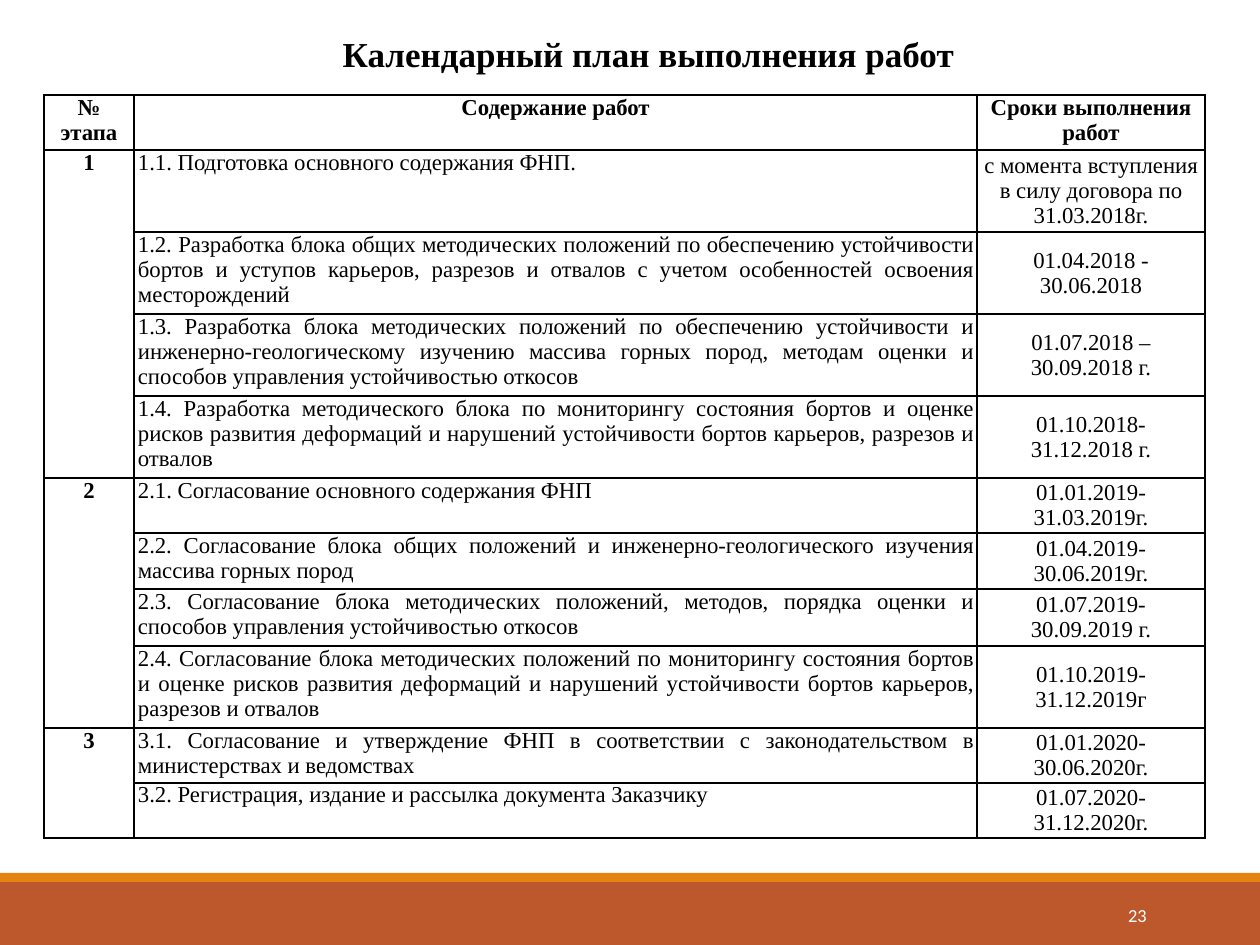
from lxml import etree
from pptx import Presentation, util as u
from pptx.dml.color import RGBColor
from pptx.enum import shapes, text
from pptx.oxml.ns import qn

PX = 914400 // 126
SERIF = "Times New Roman"
LEFT, CENTER, RIGHT, JUSTIFY = (text.PP_ALIGN.LEFT, text.PP_ALIGN.CENTER,
                                text.PP_ALIGN.RIGHT, text.PP_ALIGN.JUSTIFY)
TOP, MIDDLE = text.MSO_ANCHOR.TOP, text.MSO_ANCHOR.MIDDLE

TITLE = "Календарный план выполнения работ"
PAGE_NUMBER = "23"
HEADERS = ["№ этапа", "Содержание работ", "Сроки выполнения работ"]

# stage -> (automatic number or None, work, dates as paragraphs, row height)
STAGES = {
    1: [
        (None, "1.1. Подготовка основного содержания ФНП.",
         ["с момента вступления в силу договора по 31.03.2018г."], 82),
        (1, "2. Разработка блока общих методических положений по обеспечению "
            "устойчивости бортов и уступов карьеров, разрезов и отвалов "
            "с учетом особенностей освоения месторождений",
         ["01.04.2018 - 30.06.2018"], 82),
        (1, "3. Разработка блока методических положений по обеспечению "
            "устойчивости и инженерно-геологическому изучению массива горных "
            "пород, методам оценки и способов управления устойчивостью откосов",
         ["01.07.2018 –", "30.09.2018 г."], 82),
        (1, "4. Разработка методического блока по мониторингу состояния бортов "
            "и оценке рисков развития деформаций и нарушений устойчивости "
            "бортов карьеров, разрезов и отвалов",
         ["01.10.2018-", "31.12.2018 г."], 82),
    ],
    2: [
        (None, "2.1. Согласование основного содержания ФНП",
         ["01.01.2019-31.03.2019г."], 55),
        (2, "2. Согласование блока общих положений и инженерно-геологического "
            "изучения массива горных пород",
         ["01.04.2019-30.06.2019г."], 56),
        (2, "3. Согласование блока методических положений, методов, порядка "
            "оценки и способов управления устойчивостью откосов",
         ["01.07.2019-", "30.09.2019 г."], 57),
        (2, "4. Согласование блока методических положений по мониторингу "
            "состояния бортов и оценке рисков развития деформаций и нарушений "
            "устойчивости бортов карьеров, разрезов и отвалов",
         ["01.10.2019-31.12.2019г"], 82),
    ],
    3: [
        (None, "3.1. Согласование и утверждение ФНП в соответствии с "
               "законодательством в министерствах и ведомствах",
         ["01.01.2020-30.06.2020г."], 54),
        (None, "3.2. Регистрация, издание и рассылка документа Заказчику",
         ["01.07.2020- 31.12.2020г."], 55),
    ],
}
HEADER_HEIGHT = 55
COLUMN_WIDTHS = [90, 843, 228]
TABLE_LEFT, TABLE_TOP = 44, 95
BARS = [(882, 63, "BD582C"), (873, 9, "E48312")]  # top, height, colour


def color(value):
    return RGBColor.from_string(value)


def box(*lengths):
    return [n * PX for n in lengths]


def write(frame, paragraphs, size, align, bold=False, font=SERIF, ink="000000"):
    for i, words in enumerate(paragraphs):
        paragraph = frame.add_paragraph() if i else frame.paragraphs[0]
        paragraph.text = words
        paragraph.alignment = align
        paragraph.font.size = u.Pt(size)
        paragraph.font.name = font
        paragraph.font.bold = bold
        paragraph.font.color.rgb = color(ink)


def add_label(slide, place, words, anchor, **style):
    frame = slide.shapes.add_textbox(*box(*place)).text_frame
    frame.word_wrap = True
    frame.vertical_anchor = anchor
    write(frame, [words], **style)


def number_paragraph(paragraph, start):
    properties = paragraph._p.get_or_add_pPr()
    properties.set("marL", "0")
    properties.set("indent", "0")
    etree.SubElement(properties, qn("a:buFont"), typeface="+mj-lt")
    etree.SubElement(properties, qn("a:buAutoNum"), type="arabicPeriod",
                     startAt=str(start))
    # Bullets come before the default run properties
    defaults = properties.find(qn("a:defRPr"))
    if defaults is not None:
        properties.append(defaults)


def draw_borders(cell):
    properties = cell._tc.get_or_add_tcPr()
    for i, side in enumerate(("lnL", "lnR", "lnT", "lnB")):
        line = etree.Element(qn(f"a:{side}"), w=str(u.Pt(1)))
        fill = etree.SubElement(line, qn("a:solidFill"))
        etree.SubElement(fill, qn("a:srgbClr"), val="000000")
        properties.insert(i, line)


def fill_cell(cell, paragraphs, align=CENTER, anchor=TOP, bold=False):
    cell.vertical_anchor = anchor
    write(cell.text_frame, paragraphs, 13, align, bold)


prs = Presentation()
prs.slide_width, prs.slide_height = box(1260, 945)
slide = prs.slides.add_slide(prs.slide_layouts[6])

# Footer bars and page number
for top, height, shade in BARS:
    bar = slide.shapes.add_shape(shapes.MSO_SHAPE.RECTANGLE,
                                 *box(0, top, 1260, height))
    bar.shadow.inherit = False
    bar.fill.solid()
    bar.fill.fore_color.rgb = color(shade)
    bar.line.fill.background()
add_label(slide, (1023, 890, 136, 50), PAGE_NUMBER, MIDDLE,
          size=10.5, align=RIGHT, font="Calibri", ink="FFFFFF")

# Title
add_label(slide, (184, 26, 929, 55), TITLE, TOP, size=20, align=CENTER, bold=True)

# Schedule table
works = [work for stage in STAGES.values() for work in stage]
heights = [HEADER_HEIGHT] + [work[3] for work in works]
schedule = slide.shapes.add_table(
    len(heights), len(COLUMN_WIDTHS),
    *box(TABLE_LEFT, TABLE_TOP, sum(COLUMN_WIDTHS), sum(heights))).table
for column, width in zip(schedule.columns, COLUMN_WIDTHS):
    column.width = width * PX
for row, height in zip(schedule.rows, heights):
    row.height = height * PX
for cell in schedule.iter_cells():
    cell.fill.background()
    cell.margin_left = cell.margin_right = 4 * PX
    cell.margin_top = cell.margin_bottom = 0
    draw_borders(cell)

for column, header in enumerate(HEADERS):
    fill_cell(schedule.cell(0, column), [header], bold=True)

row = 1
for stage, stage_works in STAGES.items():
    stage_cell = schedule.cell(row, 0)
    stage_cell.merge(schedule.cell(row + len(stage_works) - 1, 0))
    fill_cell(stage_cell, [str(stage)], bold=True)
    for start, work, dates, _ in stage_works:
        work_cell = schedule.cell(row, 1)
        fill_cell(work_cell, [work], JUSTIFY)
        if start:
            number_paragraph(work_cell.text_frame.paragraphs[0], start)
        fill_cell(schedule.cell(row, 2), dates, anchor=MIDDLE)
        row += 1

prs.save("out.pptx")
